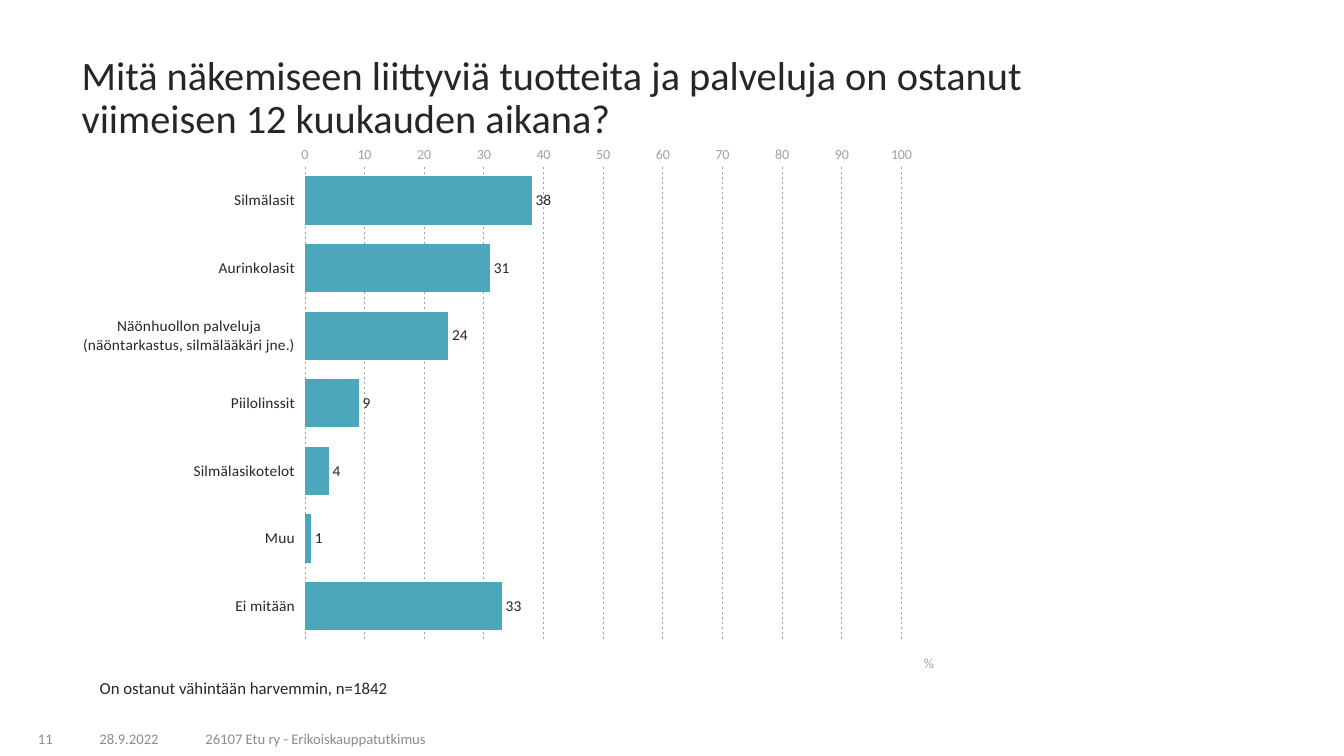
from dataclasses import dataclass
from typing import Any

from lxml.etree import SubElement
from pptx import Presentation
from pptx.chart.chart import Chart
from pptx.chart.data import CategoryChartData
from pptx.dml.color import RGBColor
from pptx.enum.chart import (XL_AXIS_CROSSES, XL_CHART_TYPE, XL_LABEL_POSITION,
                             XL_TICK_LABEL_POSITION, XL_TICK_MARK)
from pptx.enum.dml import MSO_LINE
from pptx.enum.text import MSO_ANCHOR, PP_ALIGN
from pptx.oxml import parse_xml
from pptx.oxml.ns import nsdecls, qn
from pptx.slide import Slide
from pptx.util import Inches, Pt

WIDTH, HEIGHT = Inches(13.33), Inches(7.5)
FONT = "Calibri"
INK = RGBColor(0x26, 0x26, 0x26)
FOOTER_GREY = RGBColor(0x8C, 0x8C, 0x8C)
AXIS_GREY = RGBColor(0xA0, 0xA0, 0xA0)
TEAL = RGBColor(0x4D, 0xA7, 0xBC)

PURCHASES = {
    "Silmälasit": 38,
    "Aurinkolasit": 31,
    "Näönhuollon palveluja (näöntarkastus, silmälääkäri jne.)": 24,
    "Piilolinssit": 9,
    "Silmälasikotelot": 4,
    "Muu": 1,
    "Ei mitään": 33,
}


@dataclass(frozen=True)
class Area:
    left: float
    top: float
    width: float
    height: float

    def lengths(self) -> tuple[int, int, int, int]:
        return (int(WIDTH * self.left / 100), int(HEIGHT * self.top / 100),
                int(WIDTH * self.width / 100), int(HEIGHT * self.height / 100))


@dataclass(frozen=True)
class Caption:
    text: str
    area: Area
    size: float
    color: RGBColor = INK
    align: PP_ALIGN = PP_ALIGN.LEFT
    anchor: MSO_ANCHOR = MSO_ANCHOR.BOTTOM
    spacing: float = 1.0


FOOTER_TOP, FOOTER_HEIGHT = 95.47, 4.0
CHART_AREA = Area(5.33, 19.47, 64.52, 69.87)
CAPTIONS = (
    Caption("28.9.2022", Area(4.95, FOOTER_TOP, 9.3, FOOTER_HEIGHT), 10.5,
            FOOTER_GREY, PP_ALIGN.CENTER),
    Caption("26107 Etu ry - Erikoiskauppatutkimus",
            Area(14.55, FOOTER_TOP, 44.41, FOOTER_HEIGHT), 10.5, FOOTER_GREY),
    Caption("11", Area(0.23, FOOTER_TOP, 4.43, FOOTER_HEIGHT), 10.5,
            FOOTER_GREY, PP_ALIGN.RIGHT),
    Caption("Mitä näkemiseen liittyviä tuotteita ja palveluja on ostanut \v"
            "viimeisen 12 kuukauden aikana?", Area(5.33, 8.53, 90.55, 9.07),
            28.8, anchor=MSO_ANCHOR.MIDDLE, spacing=0.9),
    Caption("On ostanut vähintään harvemmin, n=1842",
            Area(6.68, 89.33, 25.21, 3.73), 12, anchor=MSO_ANCHOR.TOP, spacing=0.9),
)


def apply(target: Any, formats: dict[str, Any]) -> None:
    for name, value in formats.items():
        setattr(target, name, value)


def style_font(font: Any, size: float, color: RGBColor) -> None:
    apply(font, {"name": FONT, "size": Pt(size), "bold": False})
    font.color.rgb = color


def add_caption(slide: Slide, caption: Caption) -> None:
    frame = slide.shapes.add_textbox(*caption.area.lengths()).text_frame
    apply(frame, {"word_wrap": True, "vertical_anchor": caption.anchor,
                  "text": caption.text})
    paragraph = frame.paragraphs[0]
    apply(paragraph, {"alignment": caption.align, "line_spacing": caption.spacing})
    for run in paragraph.runs:
        style_font(run.font, caption.size, caption.color)


def set_layout(parent: Any, index: int, values: dict[str, Any]) -> None:
    for old in parent.findall(qn("c:layout")):
        parent.remove(old)
    layout = parse_xml(f"<c:layout {nsdecls('c')}><c:manualLayout/></c:layout>")
    for tag, value in values.items():
        SubElement(layout[0], qn(f"c:{tag}")).set("val", str(value))
    parent.insert(index, layout)


def style_axes(chart: Chart) -> None:
    products, share = chart.category_axis, chart.value_axis
    for axis, size, color in ((products, 11, INK), (share, 10, AXIS_GREY)):
        apply(axis, {"major_tick_mark": XL_TICK_MARK.NONE,
                     "minor_tick_mark": XL_TICK_MARK.NONE})
        axis.format.line.fill.background()
        style_font(axis.tick_labels.font, size, color)
    apply(products, {"reverse_order": True, "crosses": XL_AXIS_CROSSES.MAXIMUM,
                     "tick_label_position": XL_TICK_LABEL_POSITION.LOW})
    apply(share, {"minimum_scale": 0, "maximum_scale": 100, "major_unit": 10,
                  "has_major_gridlines": True})
    grid = share.major_gridlines.format.line
    apply(grid, {"width": Pt(0.5), "dash_style": MSO_LINE.DASH})
    grid.color.rgb = AXIS_GREY
    unit = share.axis_title
    unit.text_frame.text = "%"
    style_font(unit.text_frame.paragraphs[0].runs[0].font, 10, AXIS_GREY)
    set_layout(unit.element if hasattr(unit, "element") else unit._element, 1,
               {"xMode": "edge", "yMode": "edge", "x": 0.98, "y": 0.955})


def add_purchase_chart(slide: Slide) -> None:
    data = CategoryChartData()
    data.categories = list(PURCHASES)
    data.add_series("Series 1", list(PURCHASES.values()))
    chart = slide.shapes.add_chart(XL_CHART_TYPE.BAR_CLUSTERED,
                                   *CHART_AREA.lengths(), data).chart
    apply(chart, {"has_legend": False, "has_title": False})
    style_font(chart.font, 12, INK)
    bars = chart.plots[0]
    apply(bars, {"gap_width": 40, "vary_by_categories": False})
    series = bars.series[0]
    series.format.fill.solid()
    series.format.fill.fore_color.rgb = TEAL
    labels = series.data_labels
    apply(labels, {"show_value": True, "position": XL_LABEL_POSITION.OUTSIDE_END,
                   "number_format": "#,##0", "number_format_is_linked": False})
    style_font(labels.font, 11, INK)
    style_axes(chart)
    set_layout(chart.element.find(".//" + qn("c:plotArea")), 0,
               {"layoutTarget": "inner", "xMode": "edge", "yMode": "edge",
                "x": 0.269, "y": 0.023, "w": 0.688, "h": 0.91})


def main() -> None:
    presentation = Presentation()
    apply(presentation, {"slide_width": WIDTH, "slide_height": HEIGHT})
    slide = presentation.slides.add_slide(presentation.slide_layouts[6])
    add_purchase_chart(slide)
    for caption in CAPTIONS:
        add_caption(slide, caption)
    presentation.save("out.pptx")


if __name__ == "__main__":
    main()
